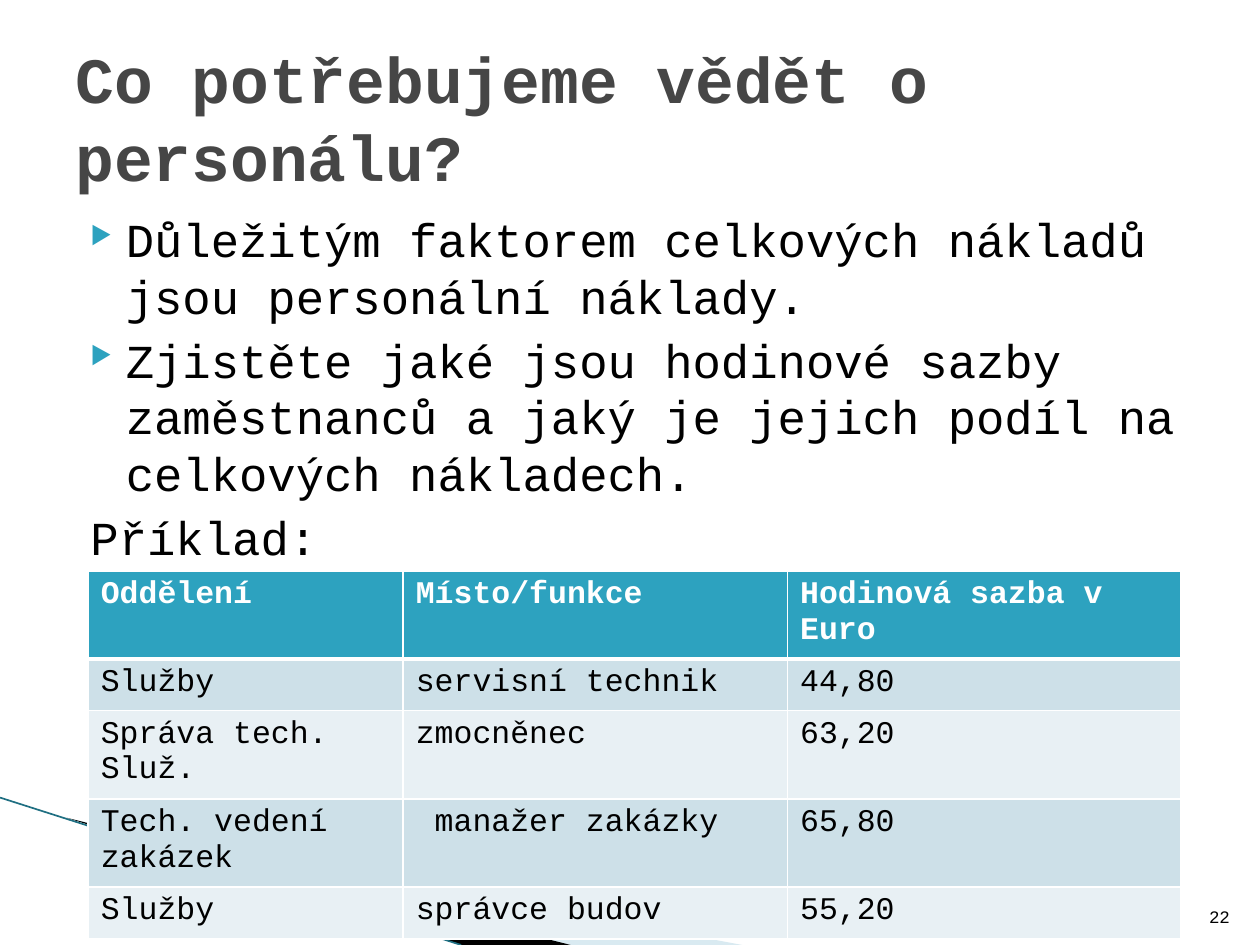
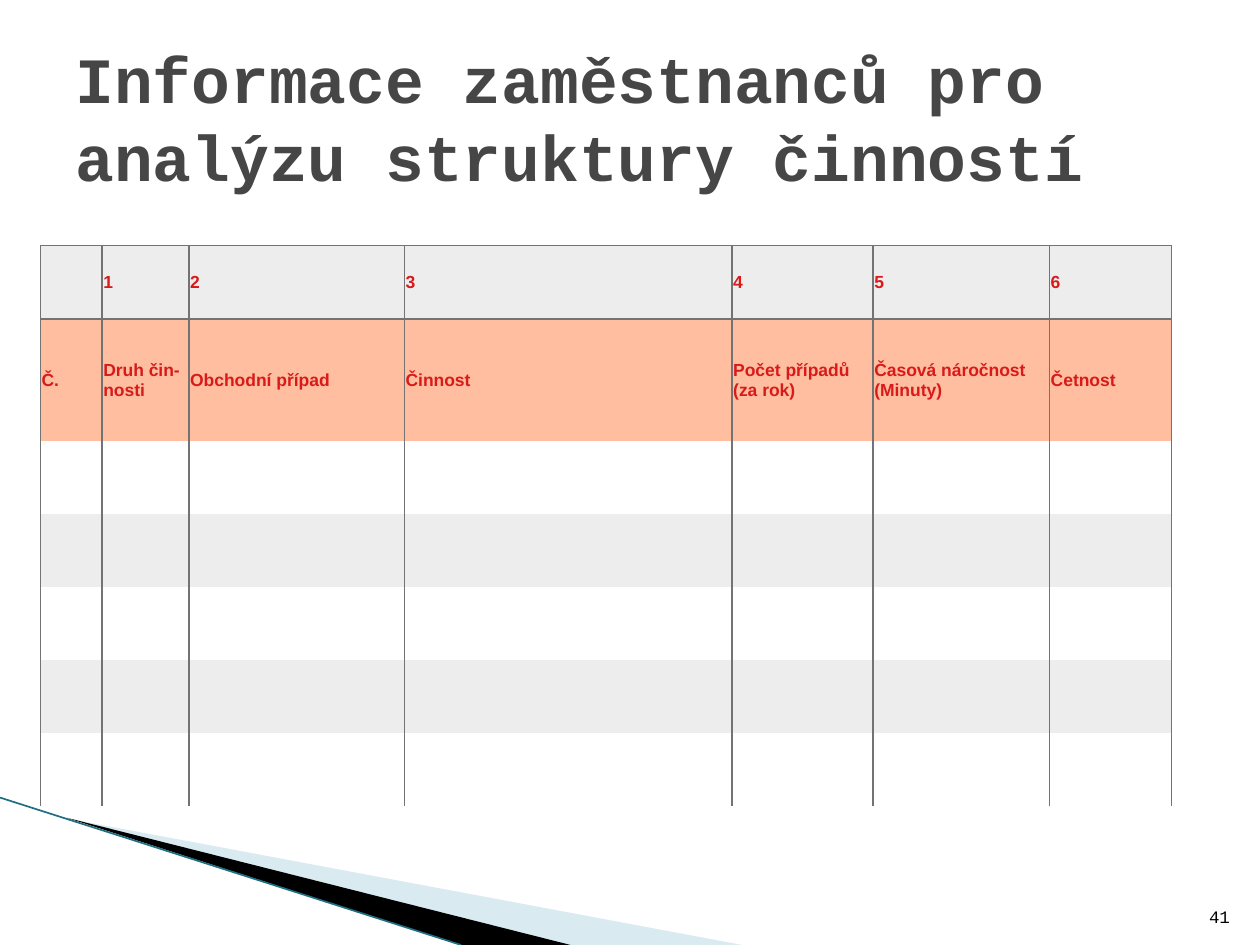
"""Builds two slides on personnel costs and the analysis of activities."""
from lxml.etree import SubElement
from pptx import Presentation
from pptx.dml.color import RGBColor
from pptx.enum.text import MSO_ANCHOR as ANCHOR, PP_ALIGN as ALIGN
from pptx.oxml.ns import qn
from pptx.util import Inches, Pt

WIDTH, HEIGHT = 10, 7.5
COLOURS = dict(ink="000000", title="464646", accent="2DA2BF", pale="A0CBDC", edge="1F6F82",
               white="FFFFFF", odd="CDE0E8", even="E8F0F4", grey="EDEDED",
               rule="737373", peach="FFBEA0", red="D91A1A")
MONO, SANS = "Courier New", "Arial"

STYLES = {
    "title": dict(name=MONO, size=Pt(36.9), bold=True, color="title"),
    "body": dict(name=MONO, size=Pt(27), bold=False, color="ink"),
    "number": dict(name=MONO, size=Pt(10), bold=False, color="ink"),
    "rate_head": dict(name=MONO, size=Pt(18), bold=True, color="white"),
    "rate": dict(name=MONO, size=Pt(18), bold=False, color="ink"),
    "activity": dict(name=SANS, size=Pt(10), bold=True, color="red"),
}

STAFF_TITLE = "Co potřebujeme vědět o personálu?"
STAFF_POINTS = [
    ("Důležitým faktorem celkových nákladů jsou personální náklady.", True),
    ("Zjistěte jaké jsou hodinové sazby zaměstnanců a jaký je jejich podíl "
     "na celkových nákladech.", True),
    ("Příklad:", False),
]
RATES = [
    ("Oddělení", "Místo/funkce", "Hodinová sazba v Euro"),
    ("Služby", "servisní technik", "44,80"),
    ("Správa tech. Služ.", "zmocněnec", "63,20"),
    ("Tech. vedení zakázek", "manažer zakázky", "65,80"),
    ("Služby", "správce budov", "55,20"),
]
RATE_COLUMNS = [2.5, 3.05, 3.12]
RATE_ROWS = [0.41, 0.41, 0.41, 0.7, 0.41]
INDENTED_ROLE = (3, 1)

ACTIVITY_TITLE = "Informace zaměstnanců pro analýzu struktury činností"
ACTIVITY_HEADS = ["Č.", "Druh čin-nosti", "Obchodní případ", "Činnost",
                  "Počet případů (za rok)", "Časová náročnost (Minuty)", "Četnost"]
ACTIVITY_COLUMNS = [0.49, 0.69, 1.71, 2.6, 1.12, 1.4, 0.97]
BLANK_ROWS = 5
ACTIVITIES = [["", *map(str, range(1, len(ACTIVITY_HEADS)))], ACTIVITY_HEADS]
ACTIVITIES += [[""] * len(ACTIVITY_HEADS)] * BLANK_ROWS
ACTIVITY_ROWS = [0.58, 0.97] + [0.58] * BLANK_ROWS

WEDGES = [
    ("pale", 40, [(0.55, 6.5), (5.89, 7.5), (4.52, 7.5)]),
    ("ink", 100, [(0.53, 6.49), (4.53, 7.5), (3.66, 7.5)]),
]
EDGE = (0, 6.33, 3.66, 7.5)


def colour(key):
    return RGBColor.from_string(COLOURS[key])


def style(font, key):
    for field, value in STYLES[key].items():
        if field == "color":
            font.color.rgb = colour(value)
        else:
            setattr(font, field, value)


def text_box(slide, place, anchor):
    frame = slide.shapes.add_textbox(*map(Inches, place)).text_frame
    frame.word_wrap = True
    frame.vertical_anchor = anchor
    return frame


def write(paragraph, text, key):
    run = paragraph.add_run()
    run.text = text
    style(run.font, key)


def draw_wedges(slide):
    for fill, opacity, corners in WEDGES:
        points = [tuple(map(Inches, corner)) for corner in corners]
        builder = slide.shapes.build_freeform(*points[0], scale=1.0)
        builder.add_line_segments(points[1:], close=True)
        wedge = builder.convert_to_shape()
        wedge.shadow.inherit = False
        wedge.line.fill.background()
        wedge.fill.solid()
        wedge.fill.fore_color.rgb = colour(fill)
        if opacity < 100:
            tint = wedge.fill._xPr.find(".//" + qn("a:srgbClr"))
            SubElement(tint, qn("a:alpha"), val=str(opacity * 1000))
    edge = slide.shapes.add_connector(1, *map(Inches, EDGE))
    edge.line.color.rgb = colour("edge")
    edge.line.width = Pt(0.95)
    SubElement(edge._element.spPr, qn("a:effectLst"))


def new_slide(deck, title, number):
    slide = deck.slides.add_slide(deck.slide_layouts[6])
    draw_wedges(slide)
    heading = text_box(slide, (0.5, 0.3, WIDTH - 1, 1.25), ANCHOR.MIDDLE)
    write(heading.paragraphs[0], title, "title")
    footer = text_box(slide, (9.46, 7.01, 0.4, 0.4), ANCHOR.BOTTOM).paragraphs[0]
    footer.alignment = ALIGN.RIGHT
    write(footer, str(number), "number")
    return slide


def add_bullets(slide, points):
    frame = text_box(slide, (0.5, 1.62, WIDTH - 1, 2.9), ANCHOR.TOP)
    for index, (text, bulleted) in enumerate(points):
        paragraph = frame.add_paragraph() if index else frame.paragraphs[0]
        props = paragraph._p.get_or_add_pPr()
        props.set("marL", str(Inches(0.4)))
        props.set("indent", str(Inches(-0.28)))
        if bulleted:
            tint = SubElement(props, qn("a:buClr"))
            SubElement(tint, qn("a:srgbClr"), val=COLOURS["accent"])
            SubElement(props, qn("a:buSzPct"), val="52000")
            SubElement(props, qn("a:buChar"), char="▶")
        else:
            SubElement(props, qn("a:buNone"))
        paragraph.space_before = Pt(4 if index else 0)
        write(paragraph, text, "body")


def border(cell, sides):
    props = cell._tc.get_or_add_tcPr()
    for side in "LRTB":
        key, width = sides.get(side, (None, 0))
        line = SubElement(props, qn("a:ln" + side), w=str(Pt(width)))
        if key:
            SubElement(SubElement(line, qn("a:solidFill")), qn("a:srgbClr"), val=COLOURS[key])
        else:
            SubElement(line, qn("a:noFill"))


def add_grid(slide, corner, columns, rows, content, look):
    """Fill a table whose look(row, column) gives style, fill, borders and cell format."""
    size = sum(columns), sum(rows)
    table = slide.shapes.add_table(len(rows), len(columns),
                                   *map(Inches, (*corner, *size))).table
    table.first_row = table.horz_banding = False
    for column, width in zip(table.columns, columns):
        column.width = Inches(width)
    for row, height in zip(table.rows, rows):
        row.height = Inches(height)
    for r, texts in enumerate(content):
        for c, text in enumerate(texts):
            cell = table.cell(r, c)
            key, fill, sides, cell_format = look(r, c)
            for field, value in cell_format.items():
                setattr(cell, field, value)
            border(cell, sides)
            if fill:
                cell.fill.solid()
                cell.fill.fore_color.rgb = colour(fill)
            else:
                cell.fill.background()
            if text:
                write(cell.text_frame.paragraphs[0], text, key)


def rate_look(r, c):
    sides = dict.fromkeys("LRTB", ("white", 1))
    if r < 2:
        sides["T" if r else "B"] = ("white", 3)
    fill = ("odd" if r % 2 else "even") if r else "accent"
    inset = 0.25 if (r, c) == INDENTED_ROLE else 0.1
    return "rate" if r else "rate_head", fill, sides, {"margin_left": Inches(inset)}


def activity_look(r, c):
    sides = dict.fromkeys({0: "LRTB", 1: "LRT"}.get(r, "LR"), ("rule", 1))
    fill = "peach" if r == 1 else "grey" if r in (0, 3, 5) else None
    cell_format = dict.fromkeys(("margin_left", "margin_right", "margin_top"), Inches(0.01))
    cell_format.update(margin_bottom=0, vertical_anchor=ANCHOR.MIDDLE)
    return "activity", fill, sides, cell_format


def main():
    deck = Presentation()
    deck.slide_width, deck.slide_height = Inches(WIDTH), Inches(HEIGHT)
    staff = new_slide(deck, STAFF_TITLE, 22)
    add_bullets(staff, STAFF_POINTS)
    add_grid(staff, (0.7, 4.53), RATE_COLUMNS, RATE_ROWS, RATES, rate_look)
    activity = new_slide(deck, ACTIVITY_TITLE, 41)
    add_grid(activity, (0.32, 1.95), ACTIVITY_COLUMNS, ACTIVITY_ROWS, ACTIVITIES, activity_look)
    deck.save("out.pptx")


if __name__ == "__main__":
    main()
